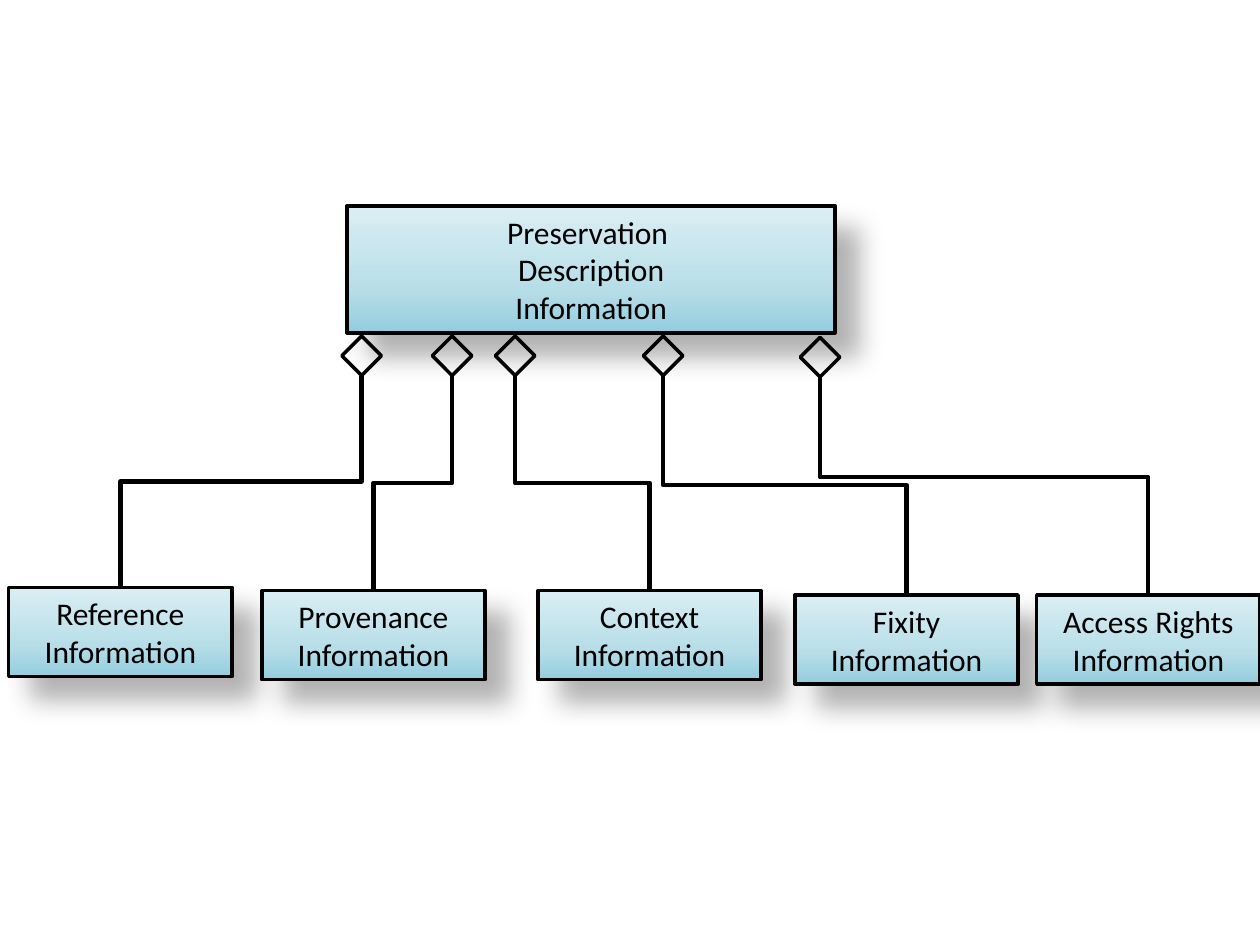
from copy import deepcopy

from lxml import etree
from pptx import Presentation
from pptx import util as u
from pptx.dml import color as col
from pptx.enum import shapes, text
from pptx.oxml import ns

HUES = {"ink": "000000", "deep": "93CDDD", "mid": "B7DEE8", "pale": "DBEEF4"}
FADE = [(0, "deep"), (0.35, "mid"), (1, "pale")]


def rgb(key):
    return col.RGBColor.from_string(HUES[key])


def child(node, tag, **attrs):
    return etree.SubElement(node, ns.qn(tag), **attrs)


class Board:
    font, size, edge, wire = "Calibri", 18, 2, 2.5

    def __init__(self, slide):
        self.shapes = slide.shapes

    def form(self, kind, *place):
        item = self.shapes.add_shape(kind, *map(u.Pt, place))
        item.shadow.inherit = False
        item.line.color.rgb = rgb("ink")
        item.line.width = u.Pt(self.edge)
        return item

    def shade(self, item):
        fill = item.fill
        fill.gradient()
        stops = item._element.spPr.find(".//" + ns.qn("a:gsLst"))
        stops.append(deepcopy(stops[-1]))
        for stop, (spot, key) in zip(fill.gradient_stops, FADE):
            stop.position = spot
            stop.color.rgb = rgb(key)
        fill.gradient_angle = 90

    def cast(self, item):
        effects = item._element.spPr.find(ns.qn("a:effectLst"))
        drop = child(effects, "a:outerShdw", blurRad=str(u.Pt(15)), dist=str(u.Pt(18)),
                     dir="2700000", algn="tl", rotWithShape="0")
        tint = child(drop, "a:srgbClr", val=HUES["ink"])
        child(tint, "a:alpha", val="30000")

    def box(self, words, *place):
        item = self.form(shapes.MSO_SHAPE.RECTANGLE, *place)
        self.shade(item)
        self.cast(item)
        frame = item.text_frame
        frame.word_wrap = True
        frame.vertical_anchor = text.MSO_ANCHOR.MIDDLE
        frame.text = words
        for para in frame.paragraphs:
            para.alignment = text.PP_ALIGN.CENTER
            para.font.name = self.font
            para.font.size = u.Pt(self.size)
            para.font.color.rgb = rgb("ink")

    def gem(self, mid, top, side):
        item = self.form(shapes.MSO_SHAPE.DIAMOND, mid - side / 2, top, side, side)
        item.fill.background()

    def elbow(self, x1, y1, x2, y2, bend):
        """Run down, across and down: a turned elbow around the same centre."""
        wide, high = y2 - y1, abs(x2 - x1)
        left, top = (x1 + x2 - wide) / 2, (y1 + y2 - high) / 2
        ends, turn = (left, left + wide), 90
        if x2 > x1:
            ends, turn = ends[::-1], 270
        line = self.shapes.add_connector(
            shapes.MSO_CONNECTOR.ELBOW,
            u.Pt(ends[0]), u.Pt(top), u.Pt(ends[1]), u.Pt(top + high))
        line.line.color.rgb = rgb("ink")
        line.line.width = u.Pt(self.wire)
        props = line._element.spPr
        props.xfrm.set("rot", str(turn * 60000))
        guides = props.find(".//" + ns.qn("a:avLst"))
        child(guides, "a:gd", name="adj1", fmla=f"val {round(bend * 100000)}")
        child(props, "a:effectLst")


def main():
    deck = Presentation()
    deck.slide_width, deck.slide_height = u.Pt(720), u.Pt(540)
    board = Board(deck.slides.add_slide(deck.slide_layouts[6]))

    # Whole
    board.box("Preservation \nDescription\nInformation", 198.4, 117.6, 278.8, 72.6)

    # Parts: name, box left, box top, diamond centre, diamond top, bend
    wide, high, side = 127.6, 51, 22.6
    parts = [
        ("Reference", 5, 335.6, 206.6, 192, 0.5),
        ("Provenance", 149.6, 337.4, 258.3, 192, 0.5),
        ("Context", 307.4, 337.4, 294.4, 192, 0.5),
        ("Fixity", 454.2, 340, 378.9, 192, 0.5),
        ("Access Rights", 592.4, 340, 468.6, 192.8, 0.46),
    ]
    for name, left, top, *_ in parts:
        board.box(name + "\nInformation", left, top, wide, high)

    # Diamonds and their lines to the parts
    for _, left, top, mid, tip, bend in parts:
        board.gem(mid, tip, side)
        board.elbow(mid, tip + side, left + wide / 2, top, bend)

    deck.save("out.pptx")


if __name__ == "__main__":
    main()
